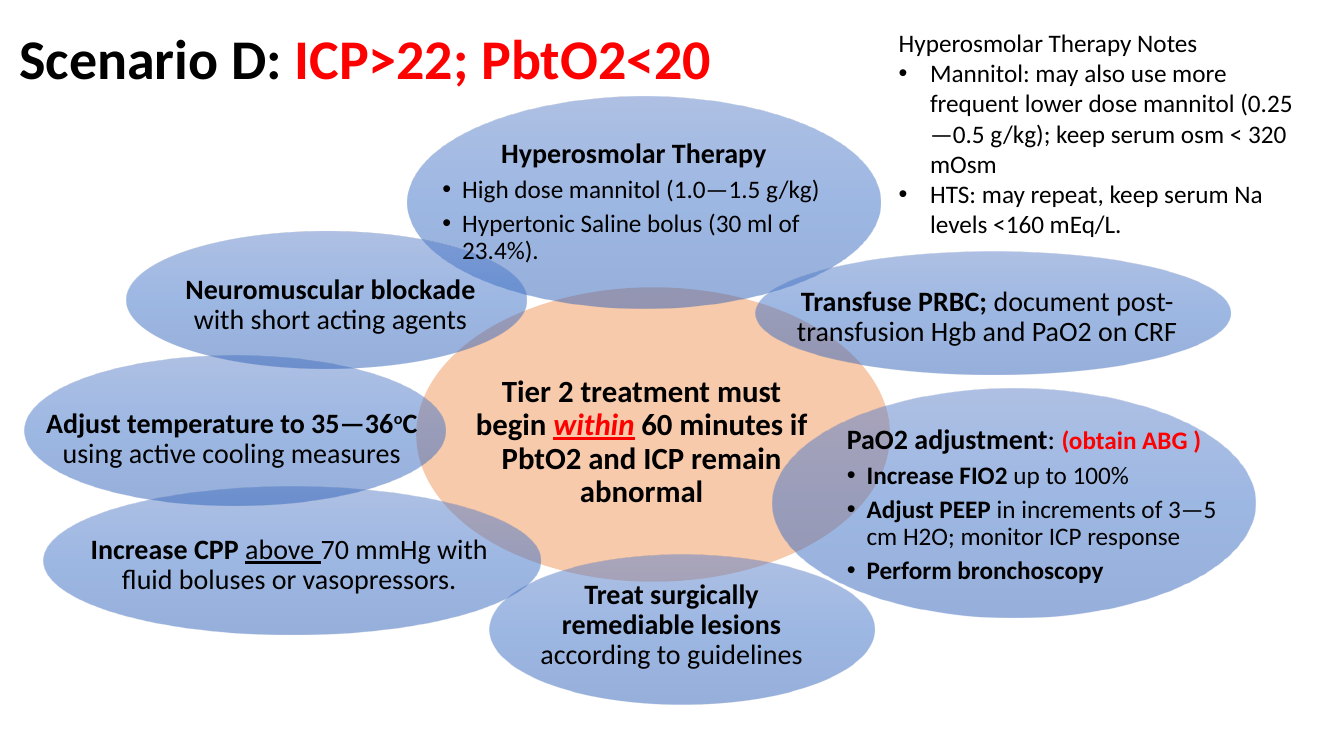
from dataclasses import dataclass

from lxml.etree import SubElement
from pptx import Presentation
from pptx.dml.color import RGBColor
from pptx.enum.shapes import MSO_SHAPE
from pptx.enum.text import MSO_ANCHOR, MSO_AUTO_SIZE, PP_ALIGN
from pptx.oxml import parse_xml
from pptx.oxml.ns import nsdecls, qn
from pptx.util import Cm, Pt


@dataclass(frozen=True)
class Theme:
    font: str = "Calibri"
    ink: str = "000000"
    alert: str = "FF0000"
    core: str = "F7CAAC"
    blues: tuple = ("5E81C9", "3B70C9", "2E60B8")
    alpha: int = 50
    title: int = 40
    lead: int = 22
    body: int = 20
    small: int = 18


THEME = Theme()
CORE = (10.49, 7.24, 11.94, 7.42)
PETALS = [
    (10.26, 2.44, 11.94, 5.33),
    (19.48, 9.8, 12.17, 5.77),
    (19.05, 6.35, 11.96, 3.1),
    (12.34, 13.97, 9.7, 3.78),
    (1.09, 12.27, 12.52, 3.71),
    (0.61, 8.97, 10.62, 3.78),
    (3.2, 5.84, 10.06, 3.45),
]

# Runs are (text, marks): b bold, i italic, u underline, r red, s small, ^ raised
LABELS = [
    ((1.98, 12.73, 10.62, 3.05),
     [("Increase CPP ", "b"), ("above ", "u"),
      ("70 mmHg with fluid boluses or vasopressors.", "")]),
    ((0.86, 9.63, 9.96, 2.87),
     [("Adjust temperature to 35—36", "b"), ("o", "b^"), ("C ", "b"),
      ("using active cooling measures", "")]),
    ((4.24, 6.45, 8.18, 2.49),
     [("Neuromuscular blockade ", "b"), ("with short acting agents", "")]),
    ((13.13, 14.07, 7.59, 3.38),
     [("Treat surgically remediable lesions ", "b"),
      ("according to guidelines", "")]),
    ((19.89, 6.25, 9.98, 3.48),
     [("Transfuse PRBC; ", "b"),
      ("document post-transfusion Hgb and PaO2 on CRF", "")]),
]
URGENT = [("Tier 2 treatment must begin ", "b"), ("within", "biur"), (" ", "b"),
          ("60 minutes if PbtO2 and ICP remain abnormal", "b")]
OSMOTIC = [
    [("High dose mannitol (1.0—1.5 g/kg)", "s")],
    [("Hypertonic Saline bolus (30 ml of 23.4%).", "s")],
]
OXYGEN = [
    [("Increase FIO2 ", "bs"), ("up to 100%", "s")],
    [("Adjust PEEP", "bs"),
     (" in increments of 3—5 cm H2O; monitor ICP response", "s")],
    [("Perform bronchoscopy", "bs")],
]
NOTES = [
    [("Mannitol: may also use more frequent lower dose mannitol "
      "(0.25—0.5 g/kg); keep serum osm < 320 mOsm", "s")],
    [("HTS: may repeat, keep serum Na levels <160 mEq/L.", "s")],
]


def add_oval(slide, area):
    oval = slide.shapes.add_shape(MSO_SHAPE.OVAL, *map(Cm, area))
    oval.shadow.inherit = False
    oval.line.fill.background()
    return oval


def add_core(slide):
    oval = add_oval(slide, CORE)
    oval.fill.solid()
    oval.fill.fore_color.rgb = RGBColor.from_string(THEME.core)


def add_petal(slide, area):
    """Add an oval with the see-through blue gradient, top to bottom."""
    oval = add_oval(slide, area)
    stops = "".join(
        f'<a:gs pos="{rank * 50000}"><a:srgbClr val="{hue}">'
        f'<a:alpha val="{THEME.alpha * 1000}"/></a:srgbClr></a:gs>'
        for rank, hue in enumerate(THEME.blues))
    blend = parse_xml(
        f'<a:gradFill {nsdecls("a")} rotWithShape="1"><a:gsLst>{stops}</a:gsLst>'
        '<a:lin ang="5400000" scaled="0"/></a:gradFill>')
    oval.element.spPr.find(qn("a:prstGeom")).addnext(blend)


def add_runs(para, runs, size=THEME.body):
    for words, marks in runs:
        run = para.add_run()
        run.text = words
        font = run.font
        font.name = THEME.font
        font.size = Pt(THEME.small if "s" in marks else size)
        font.bold = "b" in marks
        font.italic = "i" in marks
        font.underline = "u" in marks
        hue = THEME.alert if "r" in marks else THEME.ink
        font.color.rgb = RGBColor.from_string(hue)
        if "^" in marks:
            run.font._element.set("baseline", "30000")


def add_bullets(frame, items, indent, gap=0.0, pitch=1.0):
    for runs in items:
        para = frame.add_paragraph()
        para.line_spacing = pitch
        para.space_before = Pt(gap)
        props = para._p.get_or_add_pPr()
        props.set("marL", str(Cm(indent)))
        props.set("indent", str(-Cm(indent)))
        SubElement(props, qn("a:buFont")).set("typeface", "Arial")
        SubElement(props, qn("a:buChar")).set("char", "•")
        add_runs(para, runs)


def add_frame(slide, area, inset=0.05):
    """Add a wrapping text box, centred in height, and return its frame."""
    frame = slide.shapes.add_textbox(*map(Cm, area)).text_frame
    frame.word_wrap = True
    frame.vertical_anchor = MSO_ANCHOR.MIDDLE
    frame.margin_left = frame.margin_right = Cm(inset)
    frame.margin_top = frame.margin_bottom = Cm(inset)
    return frame


def add_label(slide, area, runs, size=THEME.body, align=PP_ALIGN.CENTER):
    frame = add_frame(slide, area)
    para = frame.paragraphs[0]
    para.alignment = align
    para.line_spacing = 0.9
    add_runs(para, runs, size)
    return frame


def add_notes(slide):
    frame = slide.shapes.add_textbox(*map(Cm, (22.4, 0.56, 10.77, 5.64))).text_frame
    frame.word_wrap = True
    frame.auto_size = MSO_AUTO_SIZE.SHAPE_TO_FIT_TEXT
    add_runs(frame.paragraphs[0], [("Hyperosmolar Therapy Notes", "s")])
    add_bullets(frame, NOTES, 0.79)


def set_title(slide):
    title = slide.shapes.title
    title.left, title.top, title.width, title.height = map(
        Cm, (0.23, 0.36, 29.21, 2.08))
    frame = title.text_frame
    frame.auto_size = MSO_AUTO_SIZE.NONE
    frame.vertical_anchor = MSO_ANCHOR.BOTTOM
    para = frame.paragraphs[0]
    para.alignment = PP_ALIGN.LEFT
    para.line_spacing = 0.9
    add_runs(para, [("Scenario D: ", "b"), ("ICP>22; PbtO2<20", "br")], THEME.title)


def main():
    deck = Presentation()
    deck.slide_width, deck.slide_height = Cm(33.87), Cm(19.05)
    slide = deck.slides.add_slide(deck.slide_layouts[5])
    set_title(slide)
    add_core(slide)
    for area in PETALS:
        add_petal(slide, area)
    add_label(slide, (11.84, 9.12, 8.66, 4.06), URGENT, THEME.lead)
    for area, runs in LABELS:
        add_label(slide, area, runs)
    frame = add_label(slide, (11.1, 3.07, 9.75, 4.06),
                      [("Hyperosmolar Therapy", "b")])
    add_bullets(frame, OSMOTIC, 0.5, 4.9, 0.9)
    frame = add_label(slide, (21.29, 10.74, 9.98, 3.99),
                      [("PaO2 adjustment", "b"), (": ", ""),
                       ("(obtain ABG )", "brs")], align=PP_ALIGN.LEFT)
    add_bullets(frame, OXYGEN, 0.5, 4.9, 0.9)
    add_notes(slide)
    deck.save("out.pptx")


if __name__ == "__main__":
    main()
